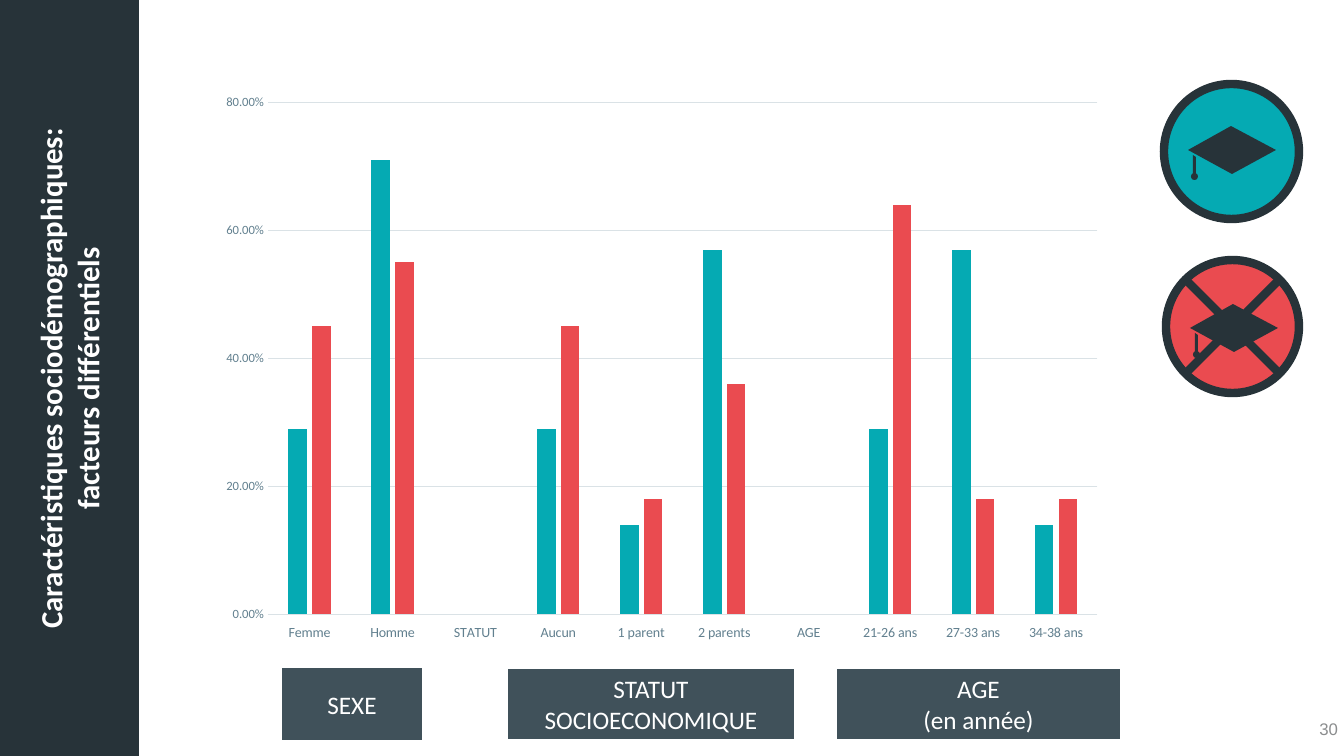
import math

from lxml import etree
from pptx import Presentation
from pptx import util as u
from pptx.chart.data import CategoryChartData
from pptx.dml.color import RGBColor
from pptx.enum import chart as charts, shapes, text
from pptx.oxml import parse_xml
from pptx.oxml.ns import nsdecls, qn

PX = 914400 / 100.8
DARK, SLATE, WHITE = "273339", "40515A", "FFFFFF"
TEAL, RED = "05AAB3", "EA4B50"
AXIS_TEXT, GRID, GREY = "62808F", "DAE2E6", "8B8D8E"


def px(length):
    return u.Emu(round(length * PX))


def color(value):
    return RGBColor.from_string(value)


def set_font(font, size, name, tint, bold=False):
    font.size, font.name, font.bold = u.Pt(size), name, bold
    font.color.rgb = color(tint)


def set_line(line, tint, width):
    line.color.rgb = color(tint)
    line.width = u.Pt(width)


def write(shape, words, size=18, font="Calibri", tint=WHITE, bold=False,
          align=text.PP_ALIGN.CENTER, anchor=text.MSO_ANCHOR.MIDDLE, wrap=True):
    """Fill a shape with text, one paragraph per line of words."""
    frame = shape.text_frame
    frame.word_wrap, frame.vertical_anchor = wrap, anchor
    frame.margin_left = frame.margin_right = px(5)
    frame.margin_top = frame.margin_bottom = px(5)
    for index, line in enumerate(words.split("\n")):
        para = frame.paragraphs[0] if index == 0 else frame.add_paragraph()
        para.alignment = align
        span = para.add_run()
        span.text = line
        set_font(span.font, size, font, tint, bold)


class SlideBuilder:
    def __init__(self, deck):
        self.page = deck.slides.add_slide(deck.slide_layouts[6])
        self.shapes = self.page.shapes

    def paint(self, shape, fill, line=None, width=1):
        shape.shadow.inherit = False
        shape.fill.solid()
        shape.fill.fore_color.rgb = color(fill)
        if line:
            set_line(shape.line, line, width)
        else:
            shape.line.fill.background()
        return shape

    def shape(self, kind, left, top, width, height, fill, line=None, weight=1):
        shape = self.shapes.add_shape(kind, px(left), px(top), px(width), px(height))
        return self.paint(shape, fill, line, weight)

    def rect(self, *place, **style):
        return self.shape(shapes.MSO_SHAPE.RECTANGLE, *place, **style)

    def disc(self, left, top, size, fill):
        return self.shape(shapes.MSO_SHAPE.OVAL, left, top, size, size, fill, DARK, 6)

    def label(self, left, top, width, height, words, rotation=0, **style):
        box = self.shapes.add_textbox(px(left), px(top), px(width), px(height))
        box.rotation = rotation
        write(box, words, **style)

    def stroke(self, x1, y1, x2, y2):
        line = self.shapes.add_connector(
            shapes.MSO_CONNECTOR.STRAIGHT, px(x1), px(y1), px(x2), px(y2))
        set_line(line.line, DARK, 6)
        etree.SubElement(line._element.spPr, qn("a:effectLst"))

    def graduation_cap(self, left, top):
        """Draw a diamond-shaped board and a tassel with a round knob."""
        board = [(43, 0), (0, 24), (44, 48), (88, 24)]
        angles = [math.radians(a) for a in range(245, -66, -31)]
        knob = [(6.5 + 3.5 * math.cos(a), 50.5 + 3.5 * math.sin(a)) for a in angles]
        tassel = [(5, 29), *knob, (8, 31)]
        outlines = [[((left + x) * 10, (top + y) * 10) for x, y in points]
                    for points in (board, tassel)]
        builder = self.shapes.build_freeform(*outlines[0][0], scale=PX / 10)
        builder.add_line_segments(outlines[0][1:], close=True)
        builder.move_to(*outlines[1][0])
        builder.add_line_segments(outlines[1][1:], close=True)
        self.paint(builder.convert_to_shape(), DARK)

    def column_chart(self, left, top, width, height, categories, series):
        """Add clustered columns; series holds (name, colour, values)."""
        data = CategoryChartData(number_format="0.00%")
        data.categories = categories
        for name, _, values in series:
            data.add_series(name, values)
        chart = self.shapes.add_chart(
            charts.XL_CHART_TYPE.COLUMN_CLUSTERED,
            px(left), px(top), px(width), px(height), data).chart
        chart.has_legend = chart.has_title = False
        set_font(chart.font, 10, "Arial", DARK)
        plot = chart.plots[0]
        plot.gap_width, plot.overlap, plot.vary_by_categories = 219, -27, False
        for bars, (_, tint, _) in zip(plot.series, series):
            bars.format.fill.solid()
            bars.format.fill.fore_color.rgb = color(tint)
            bars.invert_if_negative = False
        for axis, size in ((chart.category_axis, 10), (chart.value_axis, 9)):
            axis.major_tick_mark = axis.minor_tick_mark = charts.XL_TICK_MARK.NONE
            set_font(axis.tick_labels.font, size, "Calibri", AXIS_TEXT)
        names, scale = chart.category_axis, chart.value_axis
        names.tick_label_position = charts.XL_TICK_LABEL_POSITION.LOW
        set_line(names.format.line, GRID, 1)
        scale.minimum_scale, scale.maximum_scale, scale.major_unit = 0, 0.8, 0.2
        scale.tick_labels.number_format = "0.00%"
        scale.tick_labels.number_format_is_linked = False
        scale.format.line.fill.background()
        scale.has_major_gridlines = True
        set_line(scale.major_gridlines.format.line, GRID, 1)
        self.place_plot(chart, x=0.065, y=0.028, w=0.93, h=0.921)

    def place_plot(self, chart, **place):
        """Fix the inner plot area, in fractions of the chart."""
        area = chart._chartSpace.chart.plotArea
        for old in area.findall(qn("c:layout")):
            area.remove(old)
        parts = '<c:layoutTarget val="inner"/><c:xMode val="edge"/><c:yMode val="edge"/>'
        parts += "".join(f'<c:{key} val="{value}"/>' for key, value in place.items())
        area.insert(0, parse_xml(
            f'<c:layout {nsdecls("c")}><c:manualLayout>{parts}</c:manualLayout></c:layout>'))


def main():
    deck = Presentation()
    deck.slide_width, deck.slide_height = px(1344), px(756)
    slide = SlideBuilder(deck)

    slide.rect(-1, -1, 140, 759, fill=DARK)
    slide.label(1314, 714, 29, 29, "30", size=12, font="Arial", tint=GREY,
                align=text.PP_ALIGN.RIGHT, wrap=False)
    slide.label(-235, 337, 606, 83,
                "Caractéristiques sociodémographiques: facteurs différentiels",
                rotation=270, size=22, bold=True, anchor=text.MSO_ANCHOR.TOP)

    slide.disc(1164, 84, 135, TEAL)
    slide.graduation_cap(1188, 126)
    slide.disc(1166, 260, 133, RED)
    slide.stroke(1185, 279, 1280, 374)
    slide.stroke(1185, 374, 1280, 279)
    slide.graduation_cap(1190, 304)

    slide.column_chart(
        210, 87, 892, 556,
        ["Femme", "Homme", "STATUT", "Aucun", "1 parent", "2 parents", " AGE",
         "21-26 ans", "27-33 ans", "34-38 ans"],
        [("Series 1", TEAL,
          [0.29, 0.71, None, 0.29, 0.14, 0.57, None, 0.29, 0.57, 0.14]),
         ("Series 2", RED,
          [0.45, 0.55, None, 0.45, 0.18, 0.36, None, 0.64, 0.18, 0.18])])

    for left, top, width, height, words in (
            (281, 667, 142, 74, "SEXE"),
            (507, 668, 288, 72, "STATUT SOCIOECONOMIQUE"),
            (836, 668, 285, 72, "AGE\n(en année)")):
        write(slide.rect(left, top, width, height, fill=SLATE, line=WHITE), words)

    deck.save("out.pptx")


if __name__ == "__main__":
    main()
